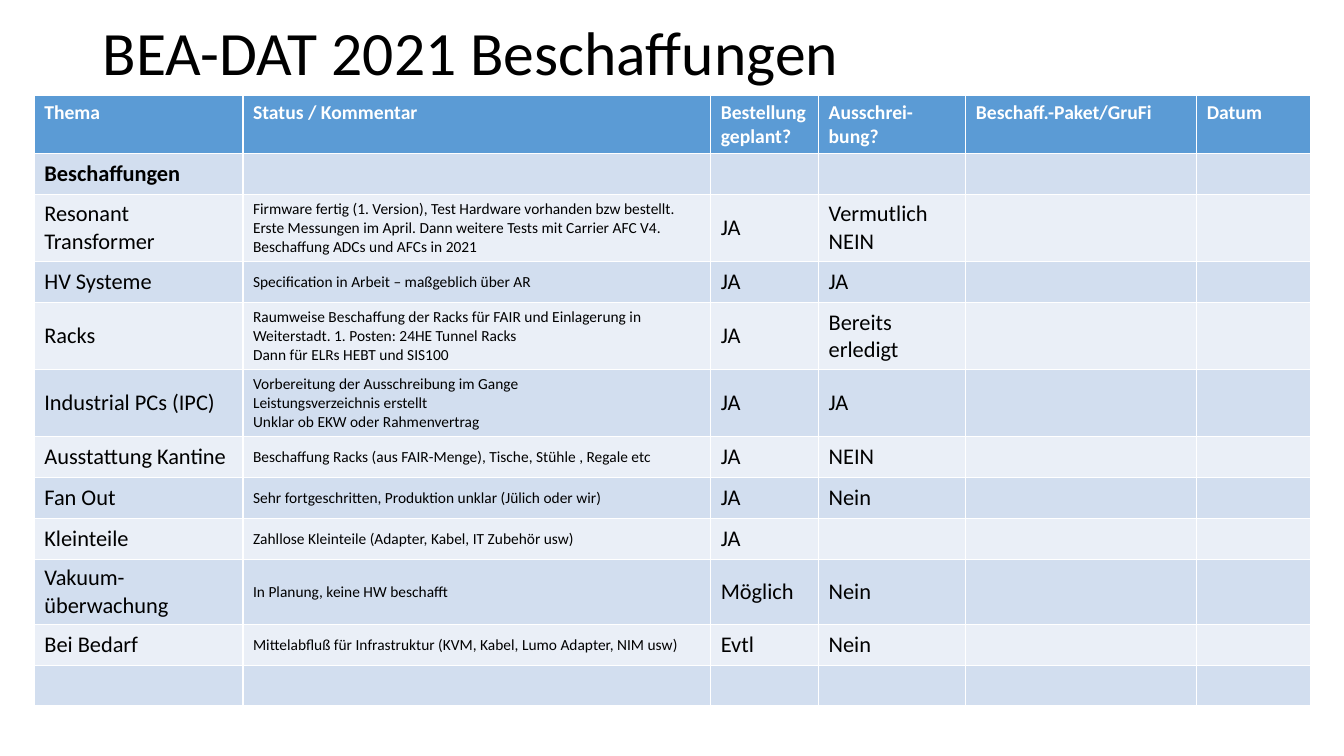
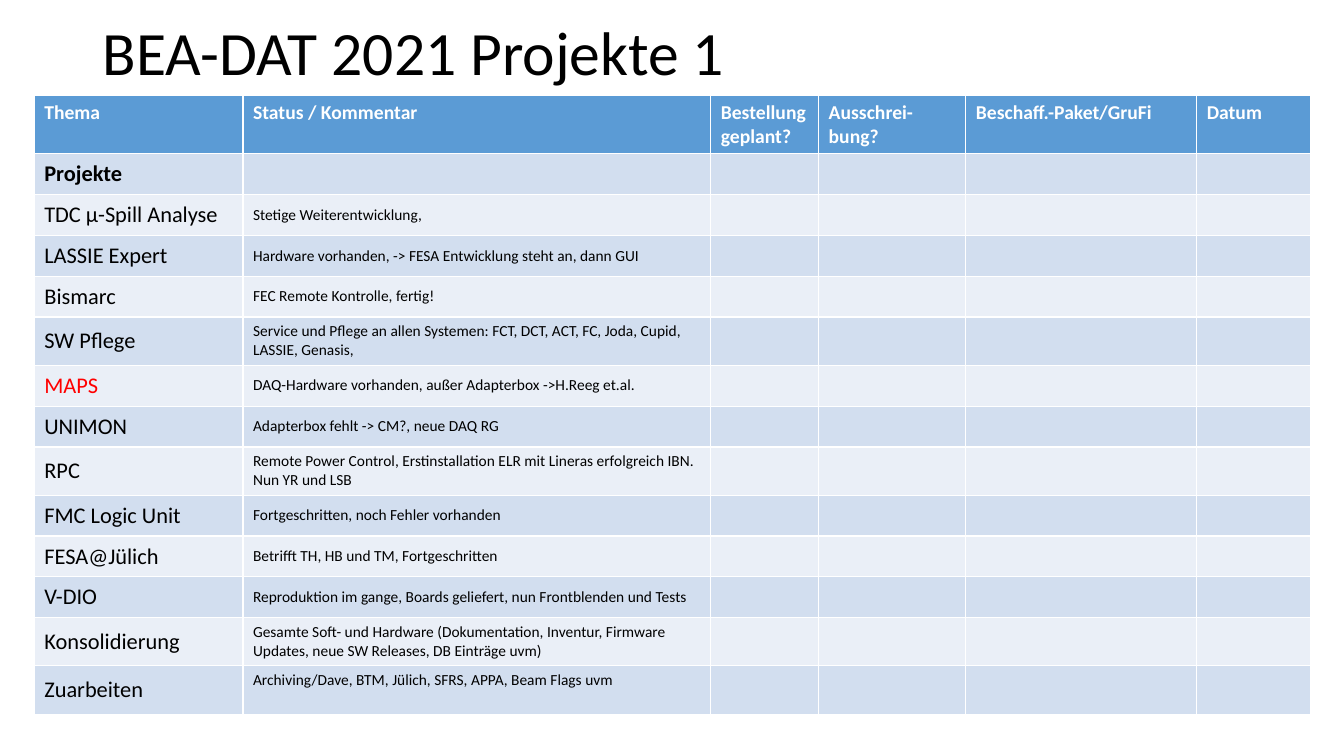
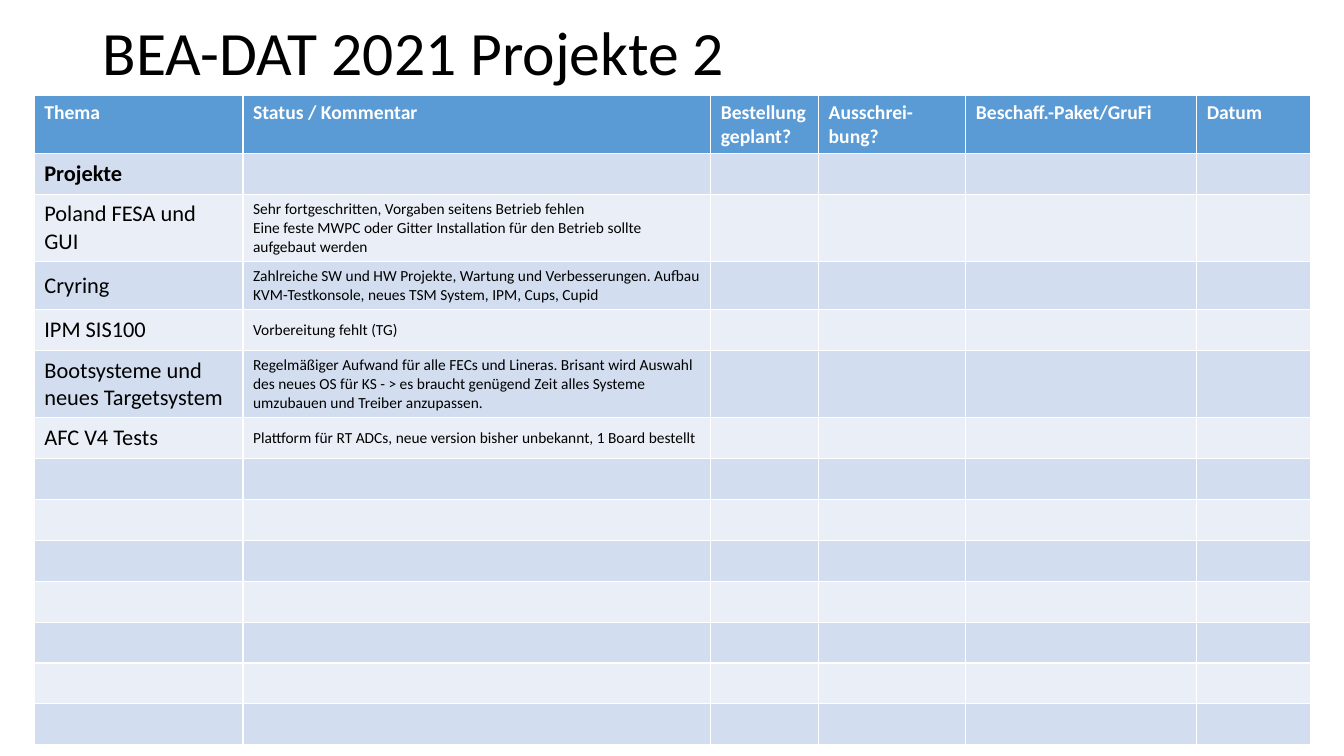
"""Build three slides of BEA-DAT 2021 procurement and project tables."""
import pptx
import pptx.dml.color
import pptx.enum.text
import pptx.util

Inches = pptx.util.Inches
MSO_ANCHOR = pptx.enum.text.MSO_ANCHOR

FONT = "Calibri"
COLOURS = {
    "text": "000000",
    "alert": "FF0000",
    "header_text": "FFFFFF",
    "header": "5B9BD5",
    "band_dark": "D2DEEF",
    "band_light": "EAEFF7",
}
HEADERS = ["Thema", "Status / Kommentar", "Bestellung geplant?",
           "Ausschrei-bung?", "Beschaff.-Paket/GruFi", "Datum"]
COLUMN_WIDTHS = [2.07, 4.64, 1.07, 1.46, 2.29, 1.13]
STATUS_COLUMN = 1
HEADER_HEIGHT = 0.57
ROW_HEIGHT = 0.4
TALL_ROW_HEIGHT = 0.48
ALERT_TOPICS = {"MAPS"}
TALL_TOPICS = {"Zuarbeiten"}

PROCUREMENTS = [
    ["Beschaffungen"],
    ["Resonant Transformer",
     "Firmware fertig (1. Version), Test Hardware vorhanden bzw bestellt.\n"
     "Erste Messungen im April. Dann weitere Tests mit Carrier AFC V4.\n"
     "Beschaffung ADCs und AFCs in 2021", "JA", "Vermutlich NEIN"],
    ["HV Systeme", "Specification in Arbeit – maßgeblich über AR", "JA", "JA"],
    ["Racks",
     "Raumweise Beschaffung der Racks für FAIR und Einlagerung in "
     "Weiterstadt. 1. Posten: 24HE Tunnel Racks\n"
     "Dann für ELRs HEBT und SIS100", "JA", "Bereits erledigt"],
    ["Industrial PCs (IPC)",
     "Vorbereitung der Ausschreibung im Gange\n"
     "Leistungsverzeichnis erstellt\n"
     "Unklar ob EKW oder Rahmenvertrag", "JA", "JA"],
    ["Ausstattung Kantine",
     "Beschaffung Racks (aus FAIR-Menge), Tische, Stühle , Regale etc",
     "JA", "NEIN"],
    ["Fan Out", "Sehr fortgeschritten, Produktion unklar (Jülich oder wir)",
     "JA", "Nein"],
    ["Kleinteile", "Zahllose Kleinteile (Adapter, Kabel, IT Zubehör usw)", "JA"],
    ["Vakuum-überwachung", "In Planung, keine HW beschafft", "Möglich", "Nein"],
    ["Bei Bedarf",
     "Mittelabfluß für Infrastruktur (KVM, Kabel, Lumo Adapter, NIM usw)",
     "Evtl", "Nein"],
    [],
]
PROJECTS_ONE = [
    ["Projekte"],
    ["TDC µ-Spill Analyse", "Stetige Weiterentwicklung,"],
    ["LASSIE Expert",
     "Hardware vorhanden, -> FESA Entwicklung steht an, dann GUI"],
    ["Bismarc", "FEC Remote Kontrolle, fertig!"],
    ["SW Pflege",
     "Service und Pflege an allen Systemen: FCT, DCT, ACT, FC, Joda, Cupid, "
     "LASSIE, Genasis,"],
    ["MAPS", "DAQ-Hardware vorhanden, außer Adapterbox ->H.Reeg et.al."],
    ["UNIMON", "Adapterbox fehlt -> CM?, neue DAQ RG"],
    ["RPC",
     "Remote Power Control, Erstinstallation ELR mit Lineras erfolgreich IBN. "
     "Nun YR und LSB"],
    ["FMC Logic Unit", "Fortgeschritten, noch Fehler vorhanden"],
    ["FESA@Jülich", "Betrifft TH, HB und TM, Fortgeschritten"],
    ["V-DIO",
     "Reproduktion im gange, Boards geliefert, nun Frontblenden und Tests"],
    ["Konsolidierung",
     "Gesamte Soft- und Hardware (Dokumentation, Inventur, Firmware Updates, "
     "neue SW Releases, DB Einträge uvm)"],
    ["Zuarbeiten", "Archiving/Dave, BTM, Jülich, SFRS, APPA, Beam Flags uvm"],
]
PROJECTS_TWO = [
    ["Projekte"],
    ["Poland FESA und GUI",
     "Sehr fortgeschritten, Vorgaben seitens Betrieb fehlen\n"
     "Eine feste MWPC oder Gitter Installation für den Betrieb sollte "
     "aufgebaut werden"],
    ["Cryring",
     "Zahlreiche SW und HW Projekte, Wartung und Verbesserungen. Aufbau "
     "KVM-Testkonsole, neues TSM System, IPM, Cups, Cupid"],
    ["IPM SIS100", "Vorbereitung fehlt (TG)"],
    ["Bootsysteme und neues Targetsystem",
     "Regelmäßiger Aufwand für alle FECs und Lineras. Brisant wird Auswahl des "
     "neues OS für KS - > es braucht genügend Zeit alles Systeme umzubauen und "
     "Treiber anzupassen."],
    ["AFC V4 Tests",
     "Plattform für RT ADCs, neue version bisher unbekannt, 1 Board bestellt"],
] + [[] for _ in range(7)]


def rgb(name):
    """Return the named colour."""
    return pptx.dml.color.RGBColor.from_string(COLOURS[name])


def write_text(frame, text, *, size, colour="text", bold=False, spacing=None):
    """Write one left-aligned paragraph for each line of the text."""
    frame.text = text
    for paragraph in frame.paragraphs:
        paragraph.alignment = pptx.enum.text.PP_ALIGN.LEFT
        paragraph.line_spacing = spacing
        for run in paragraph.runs:
            run.font.name = FONT
            run.font.size = pptx.util.Pt(size)
            run.font.bold = bold
            run.font.color.rgb = rgb(colour)


def fill_cell(cell, text, fill, anchor, **text_format):
    """Fill a cell and write its text, if it has any."""
    cell.fill.solid()
    cell.fill.fore_color.rgb = rgb(fill)
    cell.vertical_anchor = anchor
    if text:
        write_text(cell.text_frame, text, **text_format)


def add_title(slide, text):
    """Place and format the slide title."""
    title = slide.shapes.title
    title.left, title.top = Inches(0.92), Inches(0.16)
    title.width, title.height = Inches(11.5), Inches(0.78)
    frame = title.text_frame
    frame.auto_size = pptx.enum.text.MSO_AUTO_SIZE.NONE
    frame.vertical_anchor = MSO_ANCHOR.MIDDLE
    write_text(frame, text, size=44, spacing=0.9)


def add_status_table(slide, rows):
    """Add the status table with its header and banded rows."""
    heights = [HEADER_HEIGHT] + [
        TALL_ROW_HEIGHT if row and row[0] in TALL_TOPICS else ROW_HEIGHT
        for row in rows]
    table = slide.shapes.add_table(
        len(heights), len(HEADERS), Inches(0.34), Inches(0.95),
        Inches(sum(COLUMN_WIDTHS)), Inches(sum(heights))).table
    for column, width in zip(table.columns, COLUMN_WIDTHS):
        column.width = Inches(width)
    for table_row, height in zip(table.rows, heights):
        table_row.height = Inches(height)
    for column_index, text in enumerate(HEADERS):
        fill_cell(table.cell(0, column_index), text, "header", MSO_ANCHOR.TOP,
                  size=14, colour="header_text", bold=True)
    for row_index, row in enumerate(rows, start=1):
        band = "band_dark" if row_index % 2 else "band_light"
        texts = row + [""] * (len(HEADERS) - len(row))
        for column_index, text in enumerate(texts):
            is_status = column_index == STATUS_COLUMN
            top = is_status and texts[0] in TALL_TOPICS
            fill_cell(table.cell(row_index, column_index), text, band,
                      MSO_ANCHOR.TOP if top else MSO_ANCHOR.MIDDLE,
                      size=11 if is_status else 16,
                      colour="alert" if text in ALERT_TOPICS else "text",
                      bold=row_index == 1)


def main():
    """Build and save the presentation."""
    presentation = pptx.Presentation()
    presentation.slide_width = Inches(13.33)
    presentation.slide_height = Inches(7.5)
    for topic, rows in [("Beschaffungen", PROCUREMENTS),
                        ("Projekte 1", PROJECTS_ONE),
                        ("Projekte 2", PROJECTS_TWO)]:
        slide = presentation.slides.add_slide(presentation.slide_layouts[5])
        add_title(slide, f"BEA-DAT 2021 {topic}")
        add_status_table(slide, rows)
    presentation.save("out.pptx")


if __name__ == "__main__":
    main()
